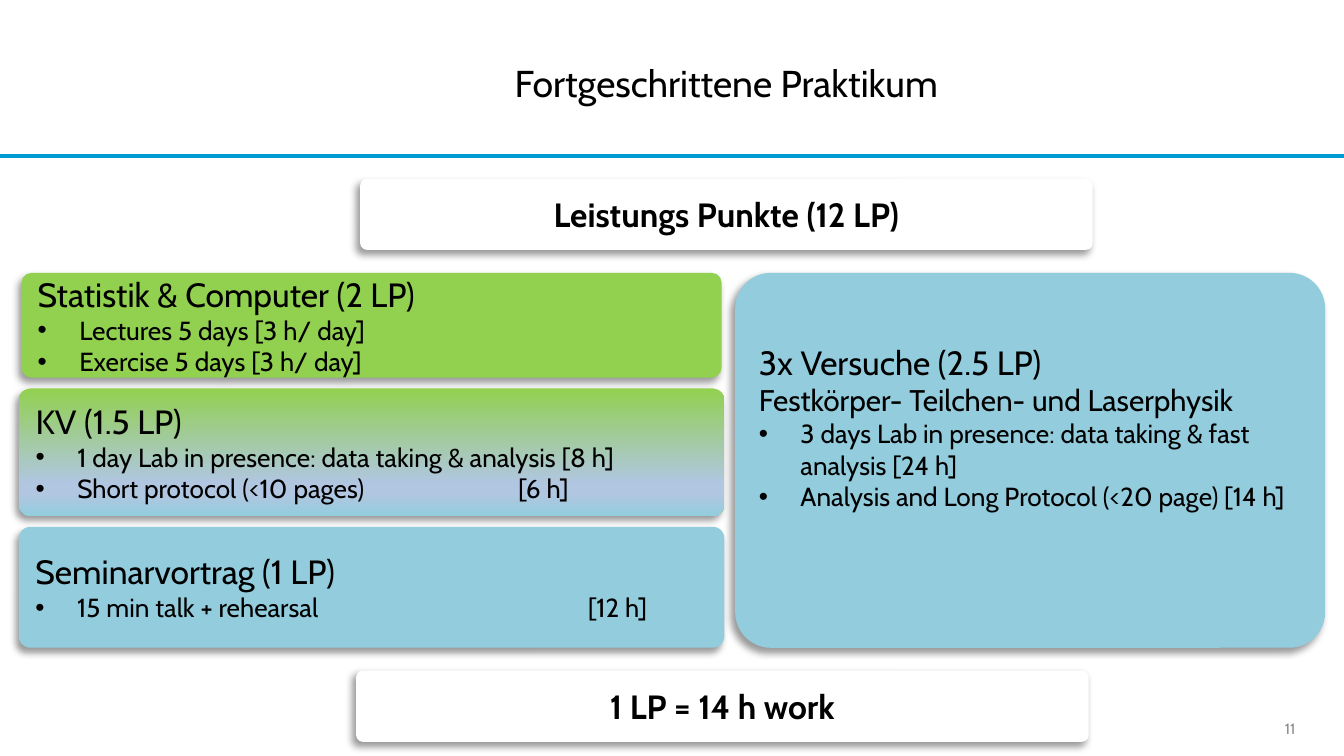
from lxml import etree
from pptx import Presentation, util as u
from pptx.dml.color import RGBColor
from pptx.enum import shapes, text
from pptx.oxml import ns

THEME = {
    "font": "Cabin", "ink": "000000", "grey": "8C8C8C", "rule": "009CD1",
    "white": "FFFFFF", "green": "92D050", "blue": "93CDDD", "mist": "B0C6E1",
    "title": 20, "head": 18, "sub": 16, "item": 14, "page": 8,
}
WIDE = 10
HIGH = WIDE * 9 / 16
GAP, TOP = 0.08, 2.03
COLS = [(0.14, 5.25), (5.47, 4.39)]
ROWS = [0.78, 0.95, 0.9]
BLEND = [(0, "green"), (74, "mist"), (83, "mist"), (100, "blue")]

TITLE = "Fortgeschrittene Praktikum"
PAGE = "11"
BANNERS = [
    ("Leistungs Punkte (12 LP)", 2.68, 1.33),
    ("1 LP = 14 h work", 2.65, 4.99),
]
CARDS = [
    {"col": 0, "row": 0, "span": 1, "fill": "green", "trim": 0.02, "lines": [
        ("head", "Statistik & Computer (2 LP)"),
        ("item", "Lectures 5 days [3 h/ day]"),
        ("item", "Exercise 5 days [3 h/ day]")]},
    {"col": 0, "row": 1, "span": 1, "fill": BLEND, "tab": 3.59, "lines": [
        ("head", "KV (1.5 LP)"),
        ("item", "1 day Lab in presence: data taking & analysis [8 h]"),
        ("item", "Short protocol (<10 pages)\t[6 h]")]},
    {"col": 1, "row": 0, "span": 3, "fill": "blue", "foot": 0.55, "lines": [
        ("head", "3x Versuche (2.5 LP)"),
        ("sub", "Festkörper- Teilchen- und Laserphysik"),
        ("item", "3 days Lab in presence: data taking & fast analysis [24 h]"),
        ("item", "Analysis and Long Protocol (<20 page) [14 h]")]},
    {"col": 0, "row": 2, "span": 1, "fill": "blue", "tab": 4.11, "lines": [
        ("head", "Seminarvortrag (1 LP)"),
        ("item", "15 min talk + rehearsal\t[12 h]")]},
]


def color(key):
    return RGBColor.from_string(THEME[key])


def node(root, tag, **attrs):
    return etree.SubElement(root, ns.qn("a:" + tag),
                            {k: str(v) for k, v in attrs.items()})


def style(para, size, ink="ink", bold=False, align=None):
    para.alignment = align
    for run in para.runs:
        font = run.font
        font.name, font.size, font.bold = THEME["font"], u.Pt(THEME[size]), bold
        font.color.rgb = color(ink)


def bullet(para, tab):
    props = para._p.get_or_add_pPr()
    step = u.Inches(0.31)
    props.set("marL", str(step))
    props.set("indent", str(-step))
    node(props, "buFont", typeface="Arial")
    node(props, "buChar", char="•")
    if tab:
        node(node(props, "tabLst"), "tab", pos=u.Inches(tab), algn="l")


def label(slide, words, area, size, ink, align):
    box = slide.shapes.add_textbox(*map(u.Inches, area))
    frame = box.text_frame
    frame.word_wrap = True
    frame.text = words
    style(frame.paragraphs[0], size, ink, align=align)
    return frame


def paint(shape, fill):
    if isinstance(fill, str):
        shape.fill.solid()
        shape.fill.fore_color.rgb = color(fill)
        return
    shape.fill.gradient()
    shape.fill.gradient_angle = 270
    stops = shape._element.spPr.find(".//" + ns.qn("a:gsLst"))
    for old in list(stops):
        stops.remove(old)
    for share, key in fill:
        node(node(stops, "gs", pos=share * 1000), "srgbClr", val=THEME[key])


def panel(slide, area, fill):
    shape = slide.shapes.add_shape(shapes.MSO_SHAPE.ROUNDED_RECTANGLE,
                                   *map(u.Inches, area))
    shape.adjustments[0] = 0.095
    paint(shape, fill)
    shape.line.fill.background()
    shape.shadow.inherit = False
    glow = shape._element.spPr.find(ns.qn("a:effectLst"))
    shade = node(glow, "outerShdw", blurRad=u.Pt(4), dist=u.Pt(3),
                 dir=135 * 60000, algn="tr", rotWithShape=0)
    node(node(shade, "srgbClr", val=THEME["ink"]), "alpha", val=40000)
    frame = shape.text_frame
    frame.word_wrap = True
    frame.vertical_anchor = text.MSO_ANCHOR.MIDDLE
    return frame


def card(slide, data):
    left, wide = COLS[data["col"]]
    row, span = data["row"], data["span"]
    top = TOP + sum(ROWS[:row]) + GAP * row
    high = sum(ROWS[row:row + span]) + GAP * (span - 1)
    trim = data.get("trim", 0)
    frame = panel(slide, (left + trim, top, wide - 2 * trim, high), data["fill"])
    frame.margin_bottom = u.Inches(data.get("foot", 0.05))
    frame.text = "\n".join(words for _, words in data["lines"])
    for para, (size, words) in zip(frame.paragraphs, data["lines"]):
        if size == "item":
            bullet(para, data.get("tab") if "\t" in words else None)
        style(para, size, align=text.PP_ALIGN.LEFT)


def main():
    deck = Presentation()
    deck.slide_width, deck.slide_height = u.Inches(WIDE), u.Inches(HIGH)
    slide = deck.slides.add_slide(deck.slide_layouts[6])
    rule = slide.shapes.add_connector(shapes.MSO_CONNECTOR.STRAIGHT, 0,
                                      u.Inches(1.16), u.Inches(WIDE), u.Inches(1.16))
    rule.line.color.rgb = color("rule")
    rule.line.width = u.Pt(2)
    node(rule._element.spPr, "effectLst")

    page = label(slide, PAGE, (9.08, 5.25, 0.56, 0.3), "page", "grey",
                 text.PP_ALIGN.RIGHT)
    page.vertical_anchor = text.MSO_ANCHOR.MIDDLE
    page.margin_right = page.margin_bottom = 0
    label(slide, TITLE, (2.18, 0.4, 6.45, 0.4), "title", "ink",
          text.PP_ALIGN.CENTER)
    for words, left, top in BANNERS:
        frame = panel(slide, (left, top, 5.45, 0.53), "white")
        frame.text = words
        style(frame.paragraphs[0], "head", bold=True, align=text.PP_ALIGN.CENTER)
    for data in CARDS:
        card(slide, data)
    deck.save("out.pptx")


if __name__ == "__main__":
    main()
